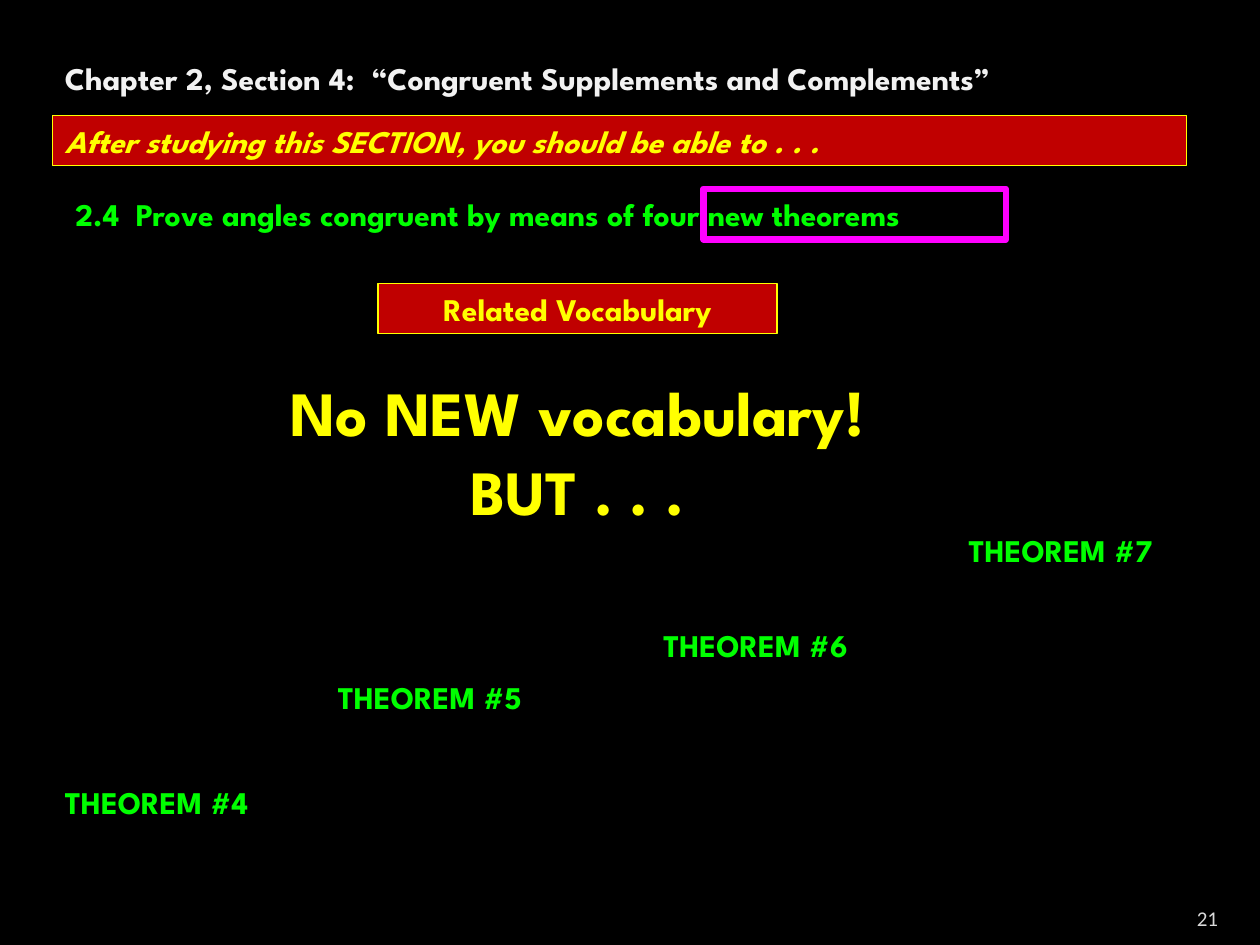
from pptx import Presentation, util as u
from pptx.dml import color
from pptx.enum import shapes, text
from pptx.oxml import parse_xml
from pptx.oxml.ns import nsdecls

COLS, ROWS = 120, 90
LINE_H, BIG_H = 4.8, 8.5
RED, YELLOW, GREEN, PINK = "C00000", "FFFF00", "00FF00", "FF00FF"
HEADING = {"name": "League Spartan", "size": u.Pt(18), "bold": True}
BIG = {**HEADING, "size": u.Pt(36)}
NUMBER = {"name": "Calibri", "size": u.Pt(12)}
CENTER, RIGHT = text.PP_ALIGN.CENTER, text.PP_ALIGN.RIGHT
THEOREMS = [(4, 5, 74, 27, None), (5, 31, 64, 23, None),
            (6, 62, 59, 24, None), (7, 82, 50, 38, CENTER)]


def rgb(value):
    """Turn a hex string into a colour."""
    return color.RGBColor.from_string(value)


def place(prs, col, row, cols, rows):
    """Convert grid columns and rows to left, top, width and height."""
    dx, dy = prs.slide_width / COLS, prs.slide_height / ROWS
    return [round(v) for v in (col * dx, row * dy, cols * dx, rows * dy)]


def write(sp, words, hue, font=HEADING, align=None, **frame):
    """Write one formatted line of text into a shape."""
    tf = sp.text_frame
    settings = {"word_wrap": True, "vertical_anchor": text.MSO_ANCHOR.TOP,
                "auto_size": text.MSO_AUTO_SIZE.SHAPE_TO_FIT_TEXT, **frame}
    for key, value in settings.items():
        setattr(tf, key, value)
    p = tf.paragraphs[0]
    p.alignment = align or text.PP_ALIGN.LEFT
    r = p.add_run()
    r.text = words
    for key, value in font.items():
        setattr(r.font, key, value)
    r.font.color.rgb = rgb(hue)


def add_label(prs, s, box, *args, **kwargs):
    """Add a text box on the grid."""
    write(s.shapes.add_textbox(*place(prs, *box)), *args, **kwargs)


def add_box(prs, s, box, line, width, fill=None):
    """Add an outlined rectangle, filled or hollow."""
    sp = s.shapes.add_shape(shapes.MSO_SHAPE.RECTANGLE, *place(prs, *box))
    sp.shadow.inherit = False
    if fill:
        sp.fill.solid()
        sp.fill.fore_color.rgb = rgb(fill)
    else:
        sp.fill.background()
    sp.line.color.rgb = rgb(line)
    sp.line.width = u.Pt(width)
    return sp


def add_banner(prs, s, box, words, font=HEADING, align=None):
    """Add a red banner with a yellow heading."""
    write(add_box(prs, s, box, YELLOW, 0.75, RED), words, YELLOW, font, align)


def main():
    """Build the section overview slide."""
    prs = Presentation()
    prs.slide_width, prs.slide_height = u.Inches(10), u.Inches(7.5)
    s = prs.slides.add_slide(prs.slide_layouts[6])
    s.background.fill.solid()
    s.background.fill.fore_color.rgb = rgb("000000")

    add_banner(prs, s, (36, 27, 38, LINE_H), "Related Vocabulary", align=CENTER)
    add_banner(prs, s, (5, 11, 108, LINE_H),
               "After studying this SECTION, you should be able to . . .",
               {**HEADING, "italic": True})
    for number, col, row, cols, align in THEOREMS:
        add_label(prs, s, (col, row, cols, LINE_H), f"THEOREM #{number}",
                  GREEN, align=align)
    add_label(prs, s, (107.6, 85, 9.6, 3.6), "21", "D9D9D9", NUMBER, RIGHT,
              vertical_anchor=text.MSO_ANCHOR.BOTTOM, margin_bottom=0,
              auto_size=text.MSO_AUTO_SIZE.NONE)
    add_label(prs, s, (6, 18, 108, LINE_H),
              "2.4  Prove angles congruent by means of four new theorems", GREEN)
    add_label(prs, s, (5, 5, 108, LINE_H),
              "Chapter 2, Section 4:  “Congruent Supplements and Complements”",
              "F2F2F2")
    for row, words in ((35, "No NEW vocabulary!"), (42.5, "BUT . . .")):
        add_label(prs, s, (20, row, 70, BIG_H), words, YELLOW, BIG, CENTER)
    frame = add_box(prs, s, (67, 18, 28.8, LINE_H), PINK, 3.78)
    frame.line._get_or_add_ln().append(parse_xml(f"<a:round {nsdecls('a')}/>"))
    prs.save("out.pptx")


if __name__ == "__main__":
    main()
